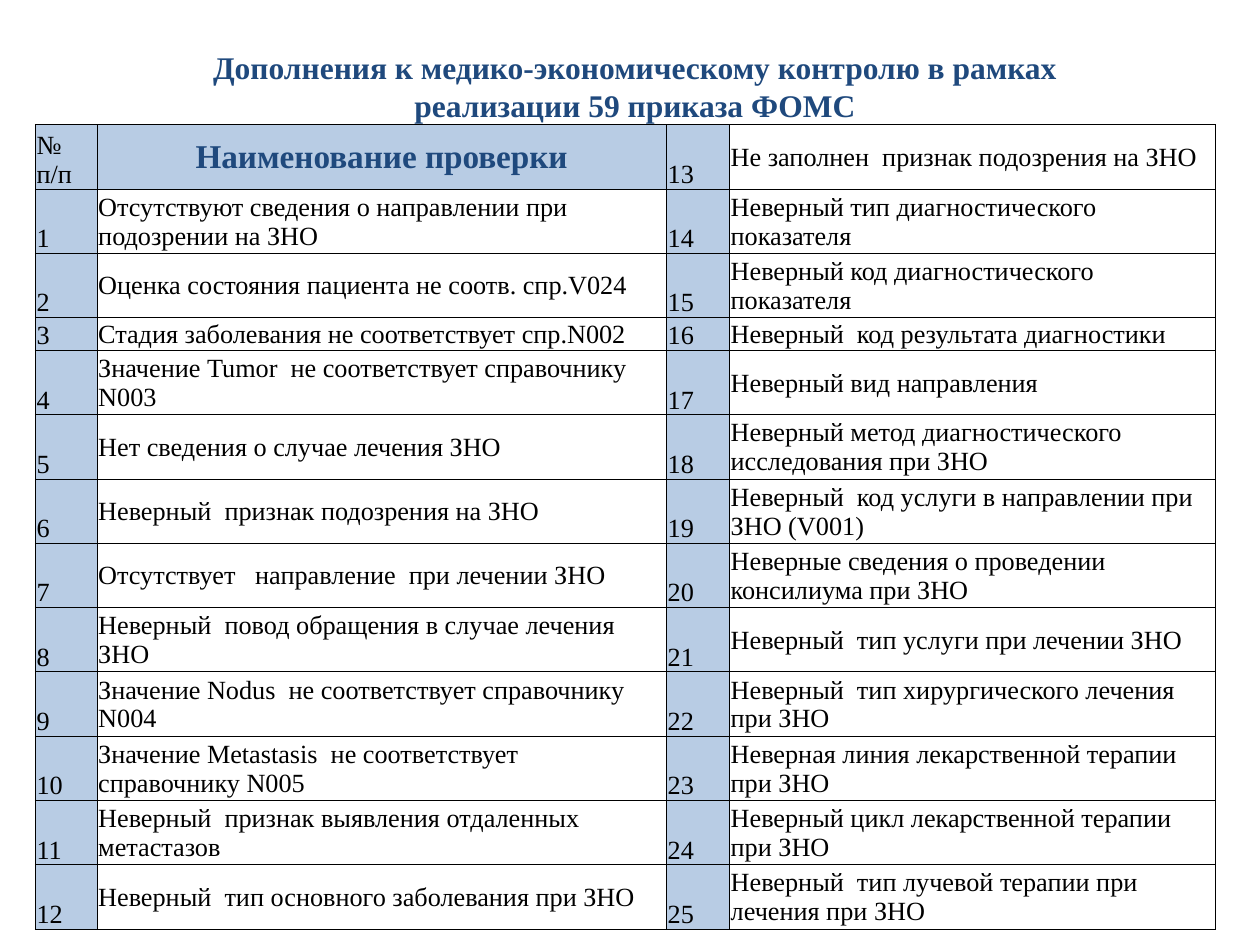
from lxml.etree import SubElement
from pptx import Presentation
from pptx.dml.color import RGBColor
from pptx.enum.text import MSO_ANCHOR, PP_ALIGN
from pptx.oxml.ns import qn
from pptx.util import Inches, Pt

TITLE = "Дополнения к медико-экономическому контролю в рамках реализации 59 приказа ФОМС"
HEAD = "Наименование проверки"
CHECKS = [
    "Отсутствуют сведения о направлении при подозрении на ЗНО",
    "Оценка состояния пациента не соотв. спр.V024",
    "Стадия заболевания не соответствует спр.N002",
    "Значение Tumor  не соответствует справочнику N003",
    "Нет сведения о случае лечения ЗНО",
    "Неверный  признак подозрения на ЗНО",
    "Отсутствует   направление  при лечении ЗНО",
    "Неверный  повод обращения в случае лечения ЗНО",
    "Значение Nodus  не соответствует справочнику N004",
    "Значение Metastasis  не соответствует справочнику N005",
    "Неверный  признак выявления отдаленных метастазов",
    "Неверный  тип основного заболевания при ЗНО",
    "Не заполнен  признак подозрения на ЗНО",
    "Неверный тип диагностического показателя",
    "Неверный код диагностического показателя",
    "Неверный  код результата диагностики",
    "Неверный вид направления",
    "Неверный метод диагностического исследования при ЗНО",
    "Неверный  код услуги в направлении при ЗНО (V001)",
    "Неверные сведения о проведении консилиума при ЗНО",
    "Неверный  тип услуги при лечении ЗНО",
    "Неверный  тип хирургического лечения при ЗНО",
    "Неверная линия лекарственной терапии при ЗНО",
    "Неверный цикл лекарственной терапии при ЗНО",
    "Неверный  тип лучевой терапии при  лечения при ЗНО",
]
COLS = [0.49, 4.52, 0.5, 3.86]
TALL, SHORT = 0.51, 0.26
SHORT_ROW = 3


def color(code):
    return RGBColor.from_string(code)


class Deck:
    face, ink, navy, pale = "Times New Roman", "000000", "1F497D", "B8CCE4"

    def __init__(self, slide):
        self.slide = slide

    def label(self, frame, text, size, head=False):
        frame.word_wrap = True
        para = frame.paragraphs[0]
        para.text = text
        para.alignment = PP_ALIGN.CENTER if head else PP_ALIGN.LEFT
        font = para.font
        font.name, font.size, font.bold = self.face, Pt(size), head
        font.color.rgb = color(self.navy if head else self.ink)

    def title(self, text, *box):
        shape = self.slide.shapes.add_textbox(*map(Inches, box))
        self.label(shape.text_frame, text, 18, head=True)

    def border(self, cell):
        props = cell._tc.get_or_add_tcPr()
        for i, side in enumerate(("lnL", "lnR", "lnT", "lnB")):
            line = props.makeelement(qn("a:" + side), {"w": str(Pt(0.5))})
            fill = SubElement(line, qn("a:solidFill"))
            SubElement(fill, qn("a:srgbClr"), val=self.ink)
            props.insert(i, line)

    def cell(self, cell, text, number, head):
        cell.margin_left = cell.margin_right = cell.margin_top = Inches(0.01)
        cell.margin_bottom = 0
        cell.vertical_anchor = MSO_ANCHOR.BOTTOM if number else MSO_ANCHOR.MIDDLE
        if number or head:
            cell.fill.solid()
            cell.fill.fore_color.rgb = color(self.pale)
        else:
            cell.fill.background()
        self.label(cell.text_frame, text, 19 if head else 15, head)
        self.border(cell)

    def table(self, rows, left, top):
        high = [SHORT if r == SHORT_ROW else TALL for r in range(len(rows))]
        box = map(Inches, (left, top, sum(COLS), sum(high)))
        grid = self.slide.shapes.add_table(len(rows), len(COLS), *box).table
        grid.first_row = grid.horz_banding = False
        for col, width in zip(grid.columns, COLS):
            col.width = Inches(width)
        for r, row in enumerate(rows):
            grid.rows[r].height = Inches(high[r])
            for c, text in enumerate(row):
                self.cell(grid.cell(r, c), text, c % 2 == 0, text == HEAD)


def main():
    prs = Presentation()
    prs.slide_width, prs.slide_height = Inches(10), Inches(7.5)
    deck = Deck(prs.slides.add_slide(prs.slide_layouts[6]))

    # Heading
    deck.title(TITLE, 1.3, 0.33, 7.48, 0.71)

    # Checks: the header and 1-12 on the left, 13-25 on the right
    items = [("№ п/п", HEAD)]
    items += [(str(n), text) for n, text in enumerate(CHECKS, 1)]
    half = len(items) // 2
    rows = [a + b for a, b in zip(items[:half], items[half:])]
    deck.table(rows, 0.28, 0.99)

    prs.save("out.pptx")


if __name__ == "__main__":
    main()
